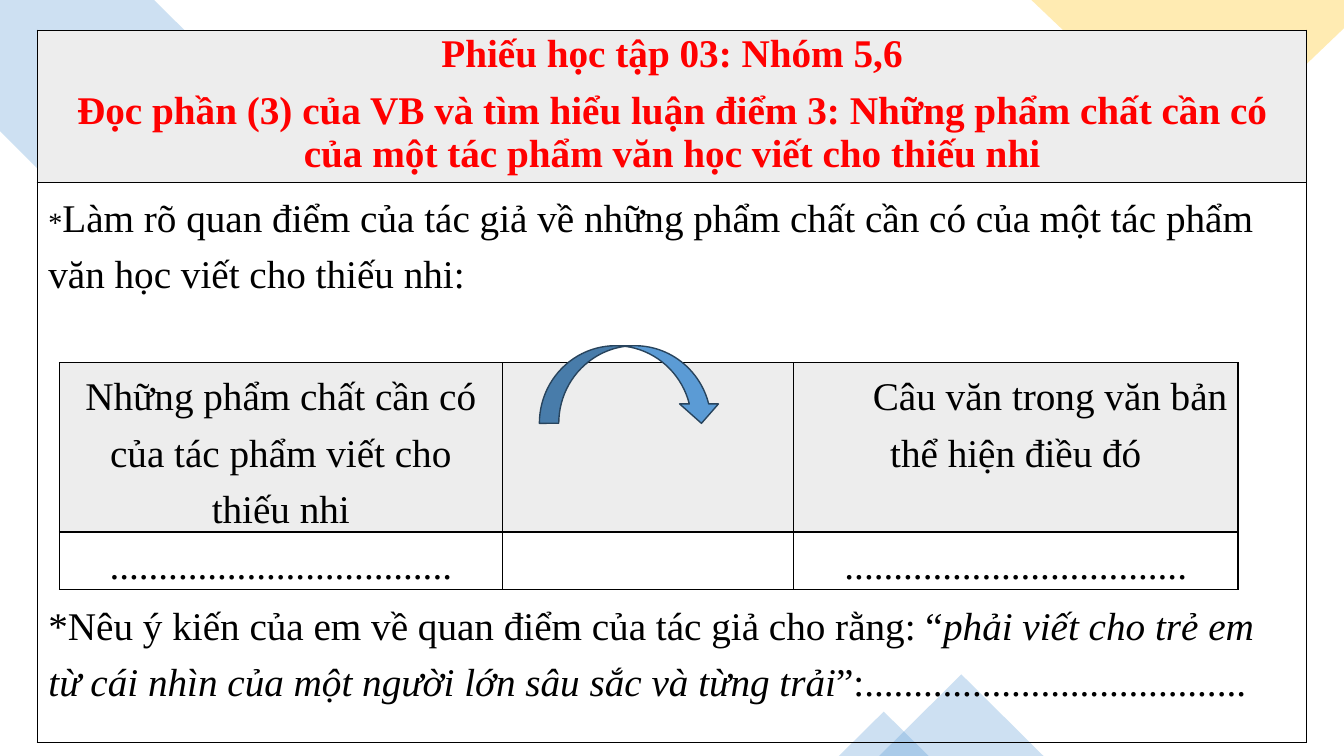
from dataclasses import dataclass

from lxml import etree
from pptx import Presentation
from pptx.dml.color import RGBColor
from pptx.enum import shapes, text
from pptx.oxml import ns
from pptx.util import Inches, Pt


@dataclass(frozen=True)
class Theme:
    blue: str = "5B9BD5"
    gold: str = "FFC000"
    navy: str = "28445D"
    gray: str = "EDEDED"
    red: str = "FF0000"
    black: str = "000000"
    font: str = "Times New Roman"
    body: int = 28
    star: int = 20


THEME = Theme()
KIND = shapes.MSO_SHAPE
CENTER = text.PP_ALIGN.CENTER
LEFT = text.PP_ALIGN.LEFT
DOTS = "." * 35


def rgb(color):
    return RGBColor.from_string(color)


def tint(shape, color):
    """Fill a background shape with a pale, see-through colour."""
    shape.shadow.inherit = False
    shape.fill.solid()
    shape.fill.fore_color.rgb = rgb(color)
    shade = shape.fill._xPr.find(".//" + ns.qn("a:srgbClr"))
    etree.SubElement(shade, ns.qn("a:alpha"), val="30000")
    shape.line.fill.background()


def add_corner(slide, points, color):
    points = [(Inches(x), Inches(y)) for x, y in points]
    form = slide.shapes.build_freeform(*points[0])
    form.add_line_segments(points[1:], close=True)
    tint(form.convert_to_shape(), color)


def add_decor(slide, kind, box, color, turn=0):
    shape = slide.shapes.add_shape(kind, *map(Inches, box))
    shape.rotation = turn
    tint(shape, color)


def add_border(cell):
    props = cell._tc.get_or_add_tcPr()
    for side in ("lnL", "lnR", "lnT", "lnB"):
        line = etree.SubElement(props, ns.qn("a:" + side), w=str(Pt(1)))
        fill = etree.SubElement(line, ns.qn("a:solidFill"))
        etree.SubElement(fill, ns.qn("a:srgbClr"), val=THEME.black)


def add_grid(slide, left, top, cols, rows, pad):
    """Add a bordered table with a gray first row and clear rows below."""
    size = map(Inches, (left, top, sum(cols), sum(rows)))
    grid = slide.shapes.add_table(len(rows), len(cols), *size).table
    grid.first_row = grid.horz_banding = False
    for col, width in zip(grid.columns, cols):
        col.width = Inches(width)
    for i, (row, height) in enumerate(zip(grid.rows, rows)):
        row.height = Inches(height)
        for cell in row.cells:
            add_border(cell)
            cell.margin_left = cell.margin_right = Inches(pad[0])
            cell.margin_top, cell.margin_bottom = Inches(pad[1]), 0
            if i:
                cell.fill.background()
            else:
                cell.fill.solid()
                cell.fill.fore_color.rgb = rgb(THEME.gray)
    return grid


def write(para, *parts, color=THEME.black, bold=False, align=CENTER, space=1.3):
    """Fill a paragraph with runs and return them."""
    para.alignment = align
    para.line_spacing = space
    para.space_after = Pt(10)
    font = para.font
    font.name, font.size, font.bold = THEME.font, Pt(THEME.body), bold
    font.color.rgb = rgb(color)
    runs = []
    for part in parts:
        run = para.add_run()
        run.text = part
        runs.append(run)
    return runs


def add_sheet(slide):
    sheet = add_grid(slide, 0.37, 0.3, [12.59], [1.51, 5.56], (0.11, 0.02))
    head, body = (sheet.cell(i, 0).text_frame for i in range(2))
    style = {"color": THEME.red, "bold": True, "space": 1.0}
    write(head.paragraphs[0], "Phiếu học tập 03: Nhóm 5,6", **style)
    write(head.add_paragraph(),
          "Đọc phần (3) của VB và tìm hiểu luận điểm 3: Những phẩm chất "
          "cần có của một tác phẩm văn học viết cho thiếu nhi", **style)

    star, _ = write(body.paragraphs[0], "*",
                    "Làm rõ quan điểm của tác giả về những phẩm chất cần có "
                    "của một tác phẩm văn học viết cho thiếu nhi:", align=LEFT)
    star.font.size = Pt(THEME.star)
    view = body.add_paragraph()
    view.space_before = Pt(201)
    _, quote, _ = write(
        view, "*Nêu ý kiến của em về quan điểm của tác giả cho rằng: “",
        "phải viết cho trẻ em từ cái nhìn của một người lớn sâu sắc và từng trải",
        "”:" + "." * 39, align=LEFT)
    quote.font.italic = True


def add_answers(slide):
    grid = add_grid(slide, 0.59, 3.6, [4.39, 2.89, 4.41], [1.67, 0.57], (0.07, 0))
    heads = {0: "Những phẩm chất cần có của tác phẩm viết cho thiếu nhi",
             2: "Câu văn trong văn bản thể hiện điều đó"}
    for col, head in heads.items():
        write(grid.cell(0, col).text_frame.paragraphs[0], head)
        write(grid.cell(1, col).text_frame.paragraphs[0], DOTS)
    last = grid.cell(0, 2).text_frame.paragraphs[0]
    last._p.get_or_add_pPr().set("indent", str(Inches(0.68)))


def add_arrow(slide):
    box = map(Inches, (5.35, 3.43, 1.8, 0.77))
    arrow = slide.shapes.add_shape(KIND.CURVED_DOWN_ARROW, *box)
    arrow.shadow.inherit = False
    arrow.fill.solid()
    arrow.fill.fore_color.rgb = rgb(THEME.blue)
    arrow.line.color.rgb = rgb(THEME.navy)
    arrow.line.width = Pt(1)


def main():
    deck = Presentation()
    deck.slide_width, deck.slide_height = Inches(13.33), Inches(7.5)
    slide = deck.slides.add_slide(deck.slide_layouts[6])
    add_corner(slide, [(1.53, 0), (0, 0), (0, 1.3), (0.41, 1.71), (1.83, 0.3)],
               THEME.blue)
    add_decor(slide, KIND.RECTANGLE, (0.98, 0.46, 0.71, 0.71), THEME.blue, 315)
    add_decor(slide, KIND.RECTANGLE, (10.98, 0.72, 0.75, 0.75), THEME.gold, 315)
    add_corner(slide, [(13.33, 0), (10.23, 0), (11.93, 1.62), (13.33, 0.28)],
               THEME.gold)
    for box in ((8.72, 6.69, 1.63, 0.81), (8.32, 7.06, 0.89, 0.44)):
        add_decor(slide, KIND.ISOSCELES_TRIANGLE, box, THEME.blue)
    add_sheet(slide)
    add_answers(slide)
    add_arrow(slide)
    deck.save("out.pptx")


if __name__ == "__main__":
    main()
